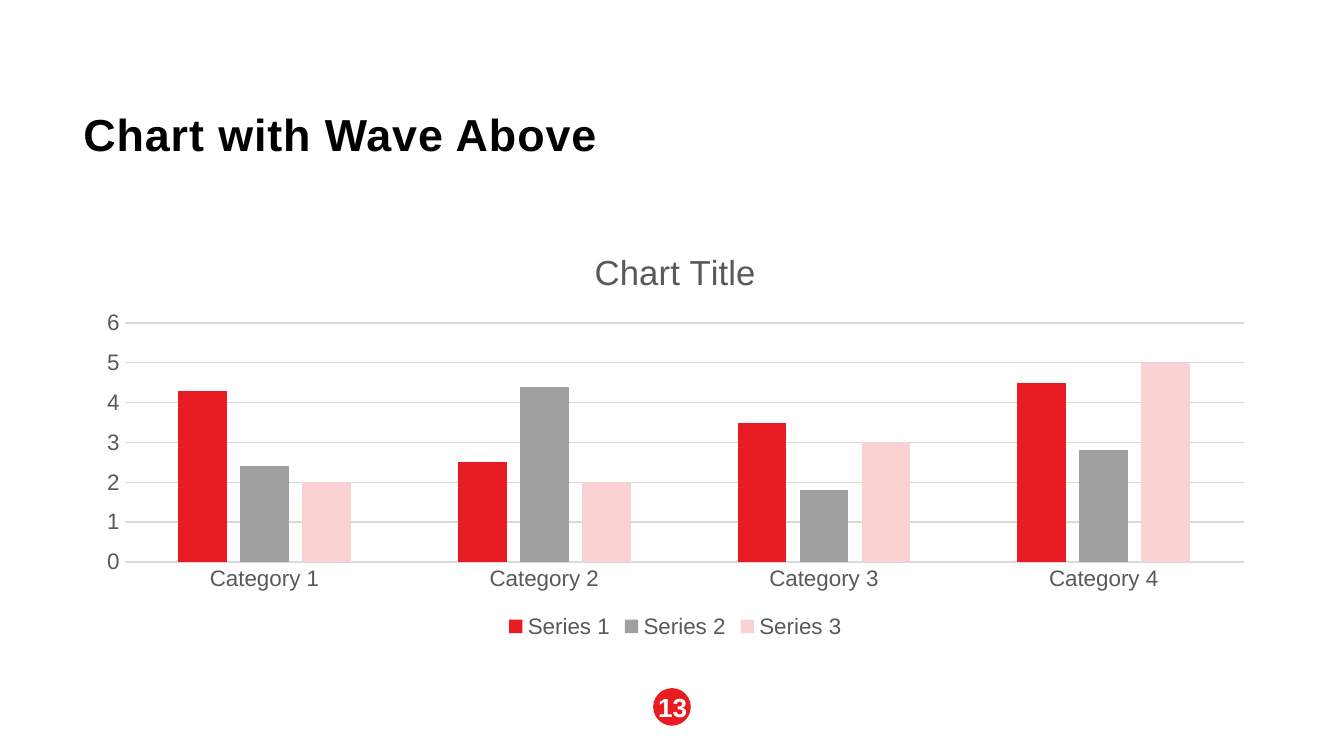
from pptx import Presentation
from pptx.chart.data import CategoryChartData
from pptx.dml.color import RGBColor
from pptx.enum.chart import XL_CHART_TYPE, XL_LEGEND_POSITION, XL_TICK_MARK
from pptx.enum.shapes import MSO_SHAPE
from pptx.enum.text import MSO_ANCHOR, PP_ALIGN
from pptx.util import Inches, Pt

RED = "E91C24"
GRAY_TEXT = "595959"
GRAY_LINE = "D9D9D9"
CATEGORIES = ["Category 1", "Category 2", "Category 3", "Category 4"]
SERIES = [
    ("Series 1", RED, (4.3, 2.5, 3.5, 4.5)),
    ("Series 2", "A0A0A0", (2.4, 4.4, 1.8, 2.8)),
    ("Series 3", "FBD2D3", (2, 2, 3, 5)),
]


def rgb(value):
    return RGBColor.from_string(value)


def style_font(font, size, color, bold=False):
    font.name = "Arial"
    font.size = Pt(size)
    font.bold = bold
    font.color.rgb = rgb(color)


def style_line(line):
    line.color.rgb = rgb(GRAY_LINE)
    line.width = Pt(0.75)


def set_margins(frame, margin):
    frame.margin_left = frame.margin_right = margin
    frame.margin_top = frame.margin_bottom = margin


def add_title(slide, text):
    title = slide.shapes.title
    title.left, title.top = Inches(0.62), Inches(0.84)
    title.width, title.height = Inches(8.81), Inches(0.79)
    frame = title.text_frame
    frame.word_wrap = True
    frame.vertical_anchor = MSO_ANCHOR.TOP
    set_margins(frame, 0)
    heading = frame.paragraphs[0]
    heading.alignment = PP_ALIGN.LEFT
    heading.line_spacing = 0.9
    run = heading.add_run()
    run.text = text
    style_font(run.font, 24, "000000", bold=True)
    run._r.get_or_add_rPr().set("spc", "50")


def style_axis(axis):
    axis.major_tick_mark = XL_TICK_MARK.NONE
    axis.minor_tick_mark = XL_TICK_MARK.NONE
    style_font(axis.tick_labels.font, 12, GRAY_TEXT)


def add_column_chart(slide):
    data = CategoryChartData()
    data.categories = CATEGORIES
    for name, _, values in SERIES:
        data.add_series(name, values)
    chart = slide.shapes.add_chart(
        XL_CHART_TYPE.COLUMN_CLUSTERED,
        Inches(0.62), Inches(1.69), Inches(8.81), Inches(3.1), data,
    ).chart
    style_font(chart.font, 10, "000000")

    chart.has_title = True
    caption = chart.chart_title.text_frame.paragraphs[0].add_run()
    caption.text = "Chart Title"
    style_font(caption.font, 18.6, GRAY_TEXT)
    chart.chart_title.include_in_layout = False

    chart.has_legend = True
    chart.legend.position = XL_LEGEND_POSITION.BOTTOM
    chart.legend.include_in_layout = False
    style_font(chart.legend.font, 12, GRAY_TEXT)

    style_axis(chart.category_axis)
    style_line(chart.category_axis.format.line)
    values_axis = chart.value_axis
    style_axis(values_axis)
    values_axis.format.line.fill.background()
    values_axis.minimum_scale, values_axis.maximum_scale = 0, 6
    values_axis.major_unit = 1
    values_axis.has_major_gridlines = True
    style_line(values_axis.major_gridlines.format.line)

    plot = chart.plots[0]
    plot.vary_by_categories = False
    plot.gap_width, plot.overlap = 219, -27
    for series, (_, color, _) in zip(plot.series, SERIES):
        series.format.fill.solid()
        series.format.fill.fore_color.rgb = rgb(color)


def add_badge(slide):
    badge = slide.shapes.add_shape(
        MSO_SHAPE.OVAL, Inches(4.86), Inches(5.12), Inches(0.28), Inches(0.28)
    )
    badge.shadow.inherit = False
    badge.fill.solid()
    badge.fill.fore_color.rgb = rgb(RED)
    badge.line.fill.background()


def add_page_number(slide, number):
    label = slide.shapes.add_textbox(
        Inches(3.88), Inches(5.11), Inches(2.25), Inches(0.3)
    )
    frame = label.text_frame
    frame.word_wrap = True
    frame.vertical_anchor = MSO_ANCHOR.MIDDLE
    paragraph = frame.paragraphs[0]
    paragraph.alignment = PP_ALIGN.CENTER
    run = paragraph.add_run()
    run.text = number
    style_font(run.font, 14, "FFFFFF", bold=True)


def main():
    deck = Presentation()
    deck.slide_width = Inches(10)
    deck.slide_height = Inches(10 * 9 / 16)
    slide = deck.slides.add_slide(deck.slide_layouts[5])
    add_badge(slide)
    add_title(slide, "Chart with Wave Above")
    add_column_chart(slide)
    add_page_number(slide, "13")
    deck.save("out.pptx")


if __name__ == "__main__":
    main()
